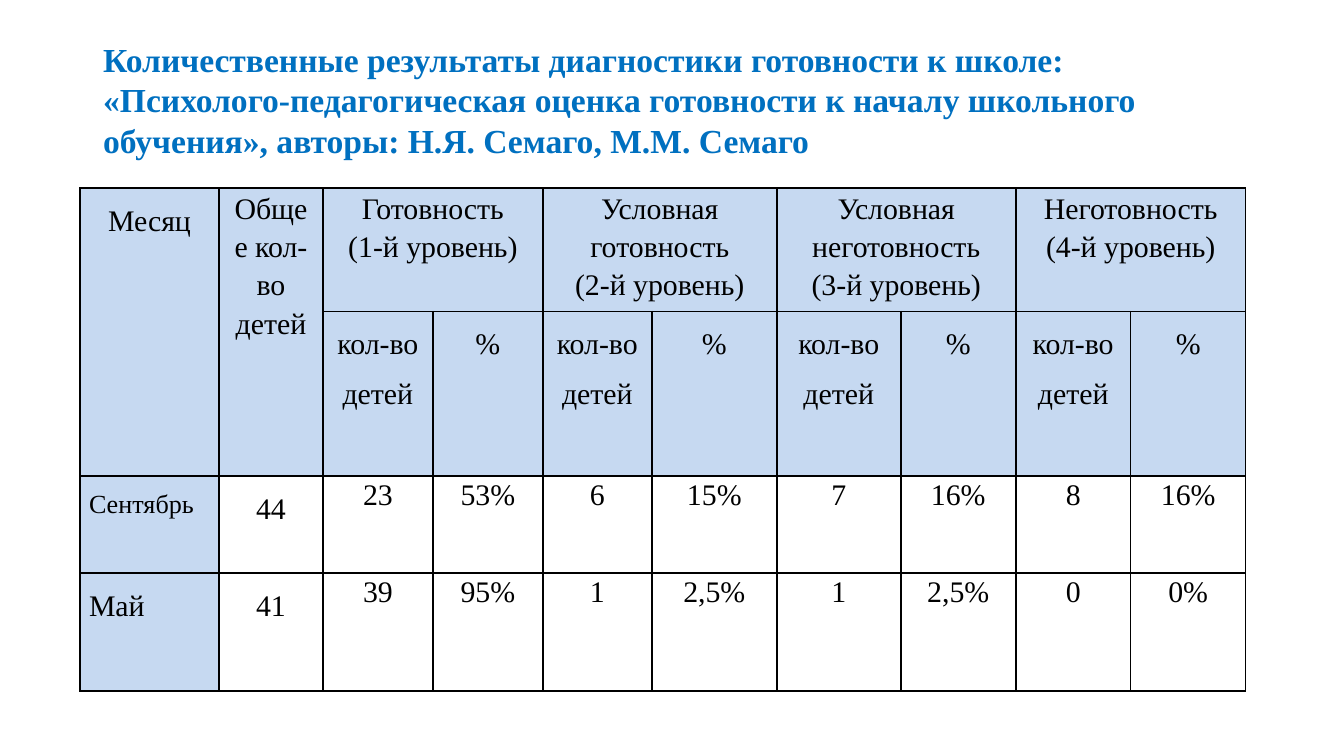
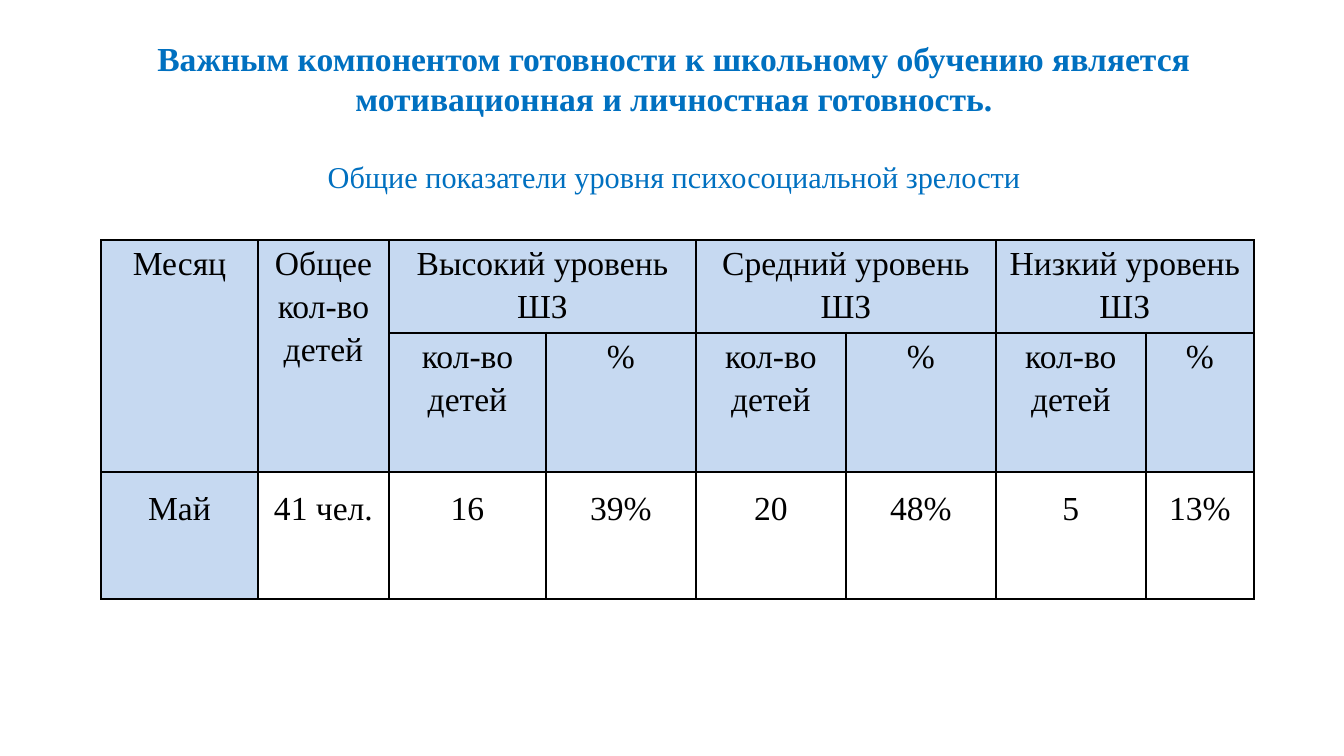
from dataclasses import dataclass

from lxml.etree import SubElement
from pptx import Presentation
from pptx.dml.color import RGBColor
from pptx.enum.text import MSO_ANCHOR as Anchor, PP_ALIGN as Align
from pptx.oxml.ns import qn
from pptx.util import Emu, Pt

PX = 914400 / 134.4


@dataclass(frozen=True)
class Theme:
    font: str = "Times New Roman"
    title_color: str = "0070C0"
    ink: str = "000000"
    header_fill: str = "C6D9F1"
    body_fill: str = "FFFFFF"
    title_size: float = 18
    subtitle_size: float = 16.2
    table_size: float = 16
    large_table_size: float = 18
    small_size: float = 14
    border: float = 1
    tight: float = 1.07
    normal: float = 1.15
    loose: float = 1.5


THEME = Theme()


def px(length):
    return Emu(round(length * PX))


def write(frame, text, *, size, color=THEME.ink, bold=False, align=Align.CENTER,
          spacing=1.0, before=0, append=False):
    """Write each line of text as one paragraph."""
    for index, line in enumerate(text.splitlines()):
        first = index == 0 and not append
        paragraph = frame.paragraphs[0] if first else frame.add_paragraph()
        paragraph.alignment = align
        paragraph.line_spacing = spacing
        if before:
            paragraph.space_before = Pt(before)
        run = paragraph.add_run()
        run.text = line
        run.font.name = THEME.font
        run.font.size = Pt(size)
        run.font.bold = bold
        run.font.color.rgb = RGBColor.from_string(color)


def add_title(slide, box, text, *, align, bottom_inset):
    frame = slide.shapes.add_textbox(*map(px, box)).text_frame
    frame.word_wrap = True
    frame.vertical_anchor = Anchor.MIDDLE
    frame.margin_top = 0
    frame.margin_bottom = px(bottom_inset)
    write(frame, text, size=THEME.title_size, color=THEME.title_color, bold=True, align=align)
    return frame


def style_cell(cell, fill):
    cell.margin_left = cell.margin_right = px(9)
    cell.margin_top = cell.margin_bottom = 0
    properties = cell._tc.get_or_add_tcPr()
    for side in ("lnL", "lnR", "lnT", "lnB"):
        line = SubElement(properties, qn(f"a:{side}"), w=str(Pt(THEME.border)))
        solid = SubElement(line, qn("a:solidFill"))
        SubElement(solid, qn("a:srgbClr"), val=THEME.ink)
    cell.fill.solid()
    cell.fill.fore_color.rgb = RGBColor.from_string(fill)


def add_grid(slide, left, top, widths, heights):
    """Add a bordered table whose two header rows and first column are tinted."""
    shape = slide.shapes.add_table(len(heights), len(widths), px(left), px(top),
                                   px(sum(widths)), px(sum(heights)))
    table = shape.table
    table.first_row = table.horz_banding = False
    for column, width in zip(table.columns, widths):
        column.width = px(width)
    for row, height in zip(table.rows, heights):
        row.height = px(height)
    for row in range(len(heights)):
        for column in range(len(widths)):
            tinted = row < 2 or column == 0
            style_cell(table.cell(row, column), THEME.header_fill if tinted else THEME.body_fill)
    return table


def fill_header(table, levels, *, size, month_spacing, unit_spacing):
    """Fill the two tall headings, then one level heading over each count and share pair."""
    tall_headings = (("Месяц", month_spacing), ("Общее кол-во детей", THEME.normal))
    for column, (text, spacing) in enumerate(tall_headings):
        table.cell(0, column).merge(table.cell(1, column))
        write(table.cell(0, column).text_frame, text, size=size, spacing=spacing)
    for index, level in enumerate(levels):
        column = 2 + 2 * index
        table.cell(0, column).merge(table.cell(0, column + 1))
        write(table.cell(0, column).text_frame, level, size=size, spacing=THEME.normal)
        for offset, unit in enumerate(("кол-во детей", "%")):
            write(table.cell(1, column + offset).text_frame, unit, size=size, spacing=unit_spacing)


def fill_row(table, row, values, *, size, month_size, month_align, value_spacing):
    for column, value in enumerate(values):
        write(table.cell(row, column).text_frame, value,
              size=size if column else month_size,
              align=Align.CENTER if column else month_align,
              spacing=value_spacing if column > 1 else THEME.loose)


def build_readiness(slide):
    add_title(slide, (90, 82, 1210, 85),
              "Количественные результаты диагностики готовности к школе:\n"
              "«Психолого-педагогическая оценка готовности к началу школьного обучения», "
              "авторы: Н.Я. Семаго, М.М. Семаго",
              align=Align.LEFT, bottom_inset=50)
    table = add_grid(slide, 80, 188, (139, 104, 110, 110, 109, 125, 124, 115, 115, 115),
                     (115, 98, 97, 118))
    size = THEME.table_size
    fill_header(table, ("Готовность\n(1-й уровень)", "Условная готовность\n(2-й уровень)",
                        "Условная неготовность\n(3-й уровень)", "Неготовность\n(4-й уровень)"),
                size=size, month_spacing=THEME.loose, unit_spacing=THEME.loose)
    months = (
        (THEME.small_size, ("Сентябрь", "44", "23", "53%", "6", "15%", "7", "16%", "8", "16%")),
        (size, ("Май", "41", "39", "95%", "1", "2,5%", "1", "2,5%", "0", "0%")),
    )
    for row, (month_size, values) in enumerate(months, start=2):
        fill_row(table, row, values, size=size, month_size=month_size,
                 month_align=Align.LEFT, value_spacing=THEME.tight)


def build_maturity(slide):
    frame = add_title(slide, (69, 71, 1210, 126),
                      "Важным компонентом готовности к школьному обучению является "
                      "мотивационная и личностная готовность.",
                      align=Align.CENTER, bottom_inset=36)
    write(frame, "Общие показатели уровня психосоциальной зрелости", size=THEME.subtitle_size,
          color=THEME.title_color, before=21, append=True)
    table = add_grid(slide, 101, 240, (157, 131, 157, 150, 150, 150, 150, 108), (77, 77, 127))
    size = THEME.large_table_size
    fill_header(table, [f"{level} уровень ШЗ" for level in ("Высокий", "Средний", "Низкий")],
                size=size, month_spacing=THEME.normal, unit_spacing=THEME.normal)
    fill_row(table, 2, ("Май", "41 чел.", "16", "39%", "20", "48%", "5", "13%"), size=size,
             month_size=size, month_align=Align.CENTER, value_spacing=THEME.loose)


def main():
    presentation = Presentation()
    presentation.slide_width, presentation.slide_height = px(1344), px(756)
    for build in (build_readiness, build_maturity):
        build(presentation.slides.add_slide(presentation.slide_layouts[6]))
    presentation.save("out.pptx")


if __name__ == "__main__":
    main()
